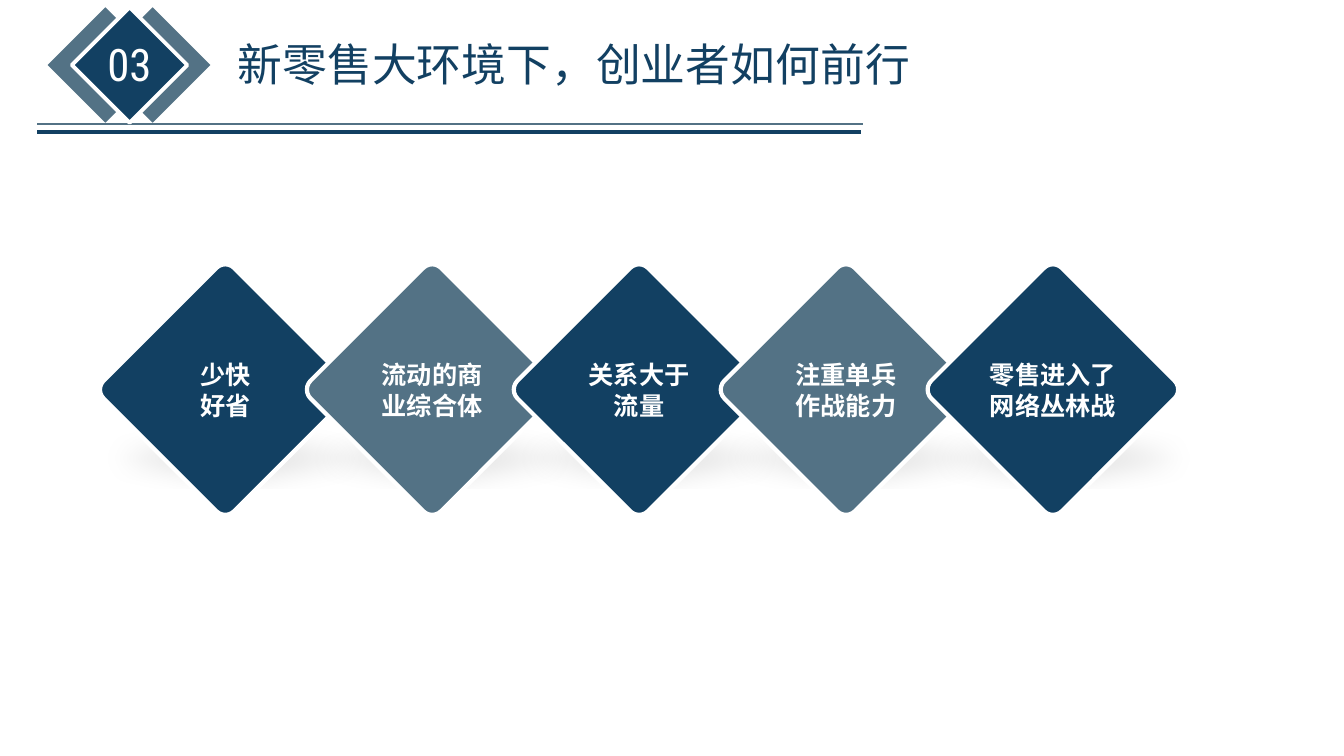
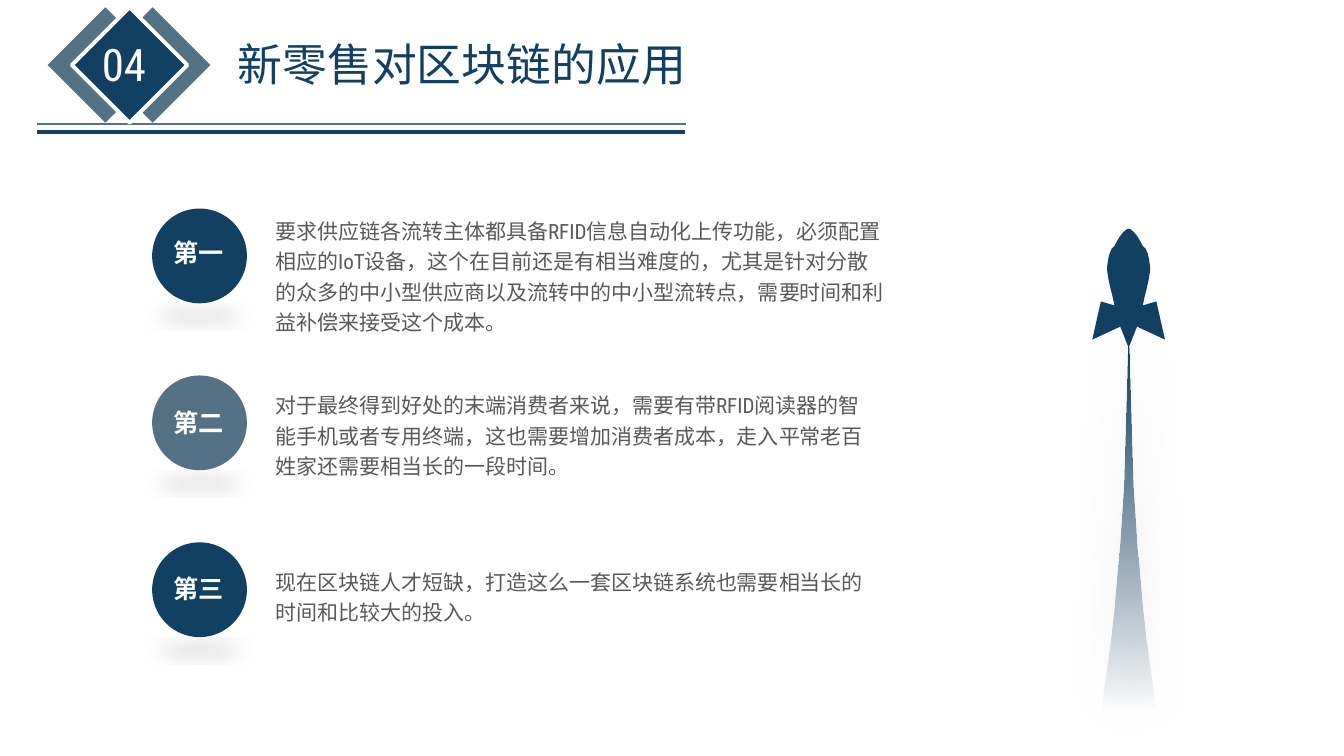
from lxml import etree
from pptx import Presentation
from pptx.dml.color import RGBColor
from pptx.enum.shapes import MSO_CONNECTOR, MSO_SHAPE
from pptx.enum.text import MSO_AUTO_SIZE, PP_ALIGN
from pptx.oxml.ns import qn
from pptx.util import Pt

NAVY = RGBColor(0x12, 0x40, 0x62)
SLATE = RGBColor(0x53, 0x72, 0x85)
GRAY = RGBColor(0x59, 0x59, 0x59)
WHITE = RGBColor(0xFF, 0xFF, 0xFF)

CJK_FONT = "Noto Sans CJK SC"
LATIN_FONT = "Roboto Condensed"

ROUNDED = MSO_SHAPE.ROUNDED_RECTANGLE
OVAL = MSO_SHAPE.OVAL
STRAIGHT = MSO_CONNECTOR.STRAIGHT
FIT_SHAPE = MSO_AUTO_SIZE.SHAPE_TO_FIT_TEXT
LEFT = PP_ALIGN.LEFT
CENTER = PP_ALIGN.CENTER

ROCKET_AXIS = 806.2
ROCKET_PROFILE = [
    (0, 163.4), (1.4, 163.8), (3.6, 165.6), (6.5, 169.2), (8.6, 172.8),
    (10.1, 175.7), (12.2, 177.8), (13.7, 181.4), (14.6, 185), (15.3, 190),
    (15.3, 193.7), (14.4, 199.4), (13, 205.9), (11.5, 211.7), (10.1, 218.2),
    (19.8, 215.3), (26, 242.6), (6, 233.3), (0, 248.4),
]
TRAIL_PROFILE = [
    (0.4, 248.4), (1, 275), (3.2, 347), (6.3, 393.6), (10, 434.9),
    (14.1, 470.9), (18.4, 499.7), (19.8, 509),
]

CHAIN = [
    (["少快", "好省"], 77.8),
    (["流动的商业综合体"], 93.6),
    (["关系大于流量"], 93.6),
    (["注重单兵作战能力"], 93.6),
    (["零售进入了网络丛林战"], 108),
]
POINTS = [
    ("第一", 166.3, 149, 452.2,
     "要求供应链各流转主体都具备RFID信息自动化上传功能，必须配置相应的IoT设备，"
     "这个在目前还是有相当难度的，尤其是针对分散的众多的中小型供应商以及流转中的"
     "中小型流转点，需要时间和利益补偿来接受这个成本。"),
    ("第二", 287.3, 273.6, 437.8,
     "对于最终得到好处的末端消费者来说，需要有带RFID阅读器的智能手机或者专用终端，"
     "这也需要增加消费者成本，走入平常老百姓家还需要相当长的一段时间。"),
    ("第三", 406.1, 399.6, 445.7,
     "现在区块链人才短缺，打造这么一套区块链系统也需要相当长的时间和比较大的投入。"),
]


def style_shape(shape, color, outline=0):
    shape.shadow.inherit = False
    shape.fill.solid()
    shape.fill.fore_color.rgb = color
    if outline:
        shape.line.color.rgb = WHITE
        shape.line.width = Pt(outline)
    else:
        shape.line.fill.background()


def add_shadow(shape, color, opacity, blur, distance, angle, **scaling):
    effects = shape._element.spPr.find(qn("a:effectLst"))
    shadow = etree.SubElement(
        effects, qn("a:outerShdw"), blurRad=str(Pt(blur)),
        dist=str(Pt(distance)), dir=str(angle * 60000), rotWithShape="0",
        **scaling)
    paint = etree.SubElement(shadow, qn("a:srgbClr"), val=color)
    etree.SubElement(paint, qn("a:alpha"), val=str(opacity * 1000))


def add_floor_shadow(shape, blur):
    add_shadow(shape, "000000", 10, blur, 3, 90,
               sx="90000", sy="-19000", algn="b")


def add_diamond(page, left, top, side, color, rounding=0, outline=0):
    diamond = page.shapes.add_shape(
        ROUNDED, Pt(left), Pt(top), Pt(side), Pt(side))
    diamond.adjustments[0] = rounding
    diamond.rotation = 45
    style_shape(diamond, color, outline)
    return diamond


def add_text(page, left, top, width, height, lines, size, color,
             font=CJK_FONT, align=LEFT, bold=False, spacing=None):
    box = page.shapes.add_textbox(Pt(left), Pt(top), Pt(width), Pt(height))
    frame = box.text_frame
    frame.word_wrap = True
    frame.auto_size = FIT_SHAPE
    frame.text = "\n".join(lines)
    for para in frame.paragraphs:
        para.alignment = align
        para.line_spacing = spacing
        para.font.size = Pt(size)
        para.font.bold = bold
        para.font.color.rgb = color
        para.font.name = font
        etree.SubElement(para.font._element, qn("a:ea"), typeface=CJK_FONT)


def add_rule(page, right, top, color, weight):
    rule = page.shapes.add_connector(
        STRAIGHT, Pt(26.6), Pt(top), Pt(right), Pt(top))
    rule.line.color.rgb = color
    rule.line.width = Pt(weight)
    etree.SubElement(rule._element.spPr, qn("a:effectLst"))


def add_header(page, number, number_left, title, title_width, rule_right):
    add_rule(page, rule_right, 88.6, SLATE, 1)
    for left in (79.9, 46.1):
        add_diamond(page, left, 17.3, 58.3, SLATE)
    add_diamond(page, 63.4, 17.3, 58.3, NAVY, outline=2.75)
    add_text(page, number_left, 23, 116.6 - number_left, 46, [number], 32,
             WHITE, font=LATIN_FONT, align=CENTER)
    add_rule(page, rule_right - 1, 94.3, NAVY, 3)
    add_text(page, 162.7, 23, title_width, 46, [title], 32, NAVY)


def add_symmetric(page, profile):
    outline = [(ROCKET_AXIS + half, y) for half, y in profile]
    outline += [(ROCKET_AXIS - half, y) for half, y in reversed(profile)]
    corners = [(Pt(x), Pt(y)) for x, y in outline]
    builder = page.shapes.build_freeform(*corners[0])
    builder.add_line_segments(corners[1:], close=True)
    shape = builder.convert_to_shape()
    style_shape(shape, NAVY)
    return shape


def add_rocket(page):
    add_symmetric(page, ROCKET_PROFILE)
    trail = add_symmetric(page, TRAIL_PROFILE)
    trail.fill.gradient()
    trail.fill.gradient_angle = 270
    for stop in trail.fill.gradient_stops:
        stop.color.rgb = NAVY
    colors = list(trail._element.spPr.iter(qn("a:srgbClr")))
    etree.SubElement(colors[-1], qn("a:alpha"), val="0")
    add_shadow(trail, "808080", 40, 33, 2, 45)


def add_chain(page):
    side, pitch, first_left = 131.8, 147.8, 95
    for index in range(len(CHAIN)):
        color = SLATE if index % 2 else NAVY
        diamond = add_diamond(page, first_left + pitch * index, 212.4, side,
                              color, rounding=0.068, outline=3)
        add_floor_shadow(diamond, 19)
    for index, (lines, width) in enumerate(CHAIN):
        middle = first_left + side / 2 + pitch * index
        add_text(page, middle - width / 2, 253.4, width, 51, lines, 18,
                 WHITE, align=CENTER, bold=True)


def add_points(page):
    for index, (label, label_top, top, width, text) in enumerate(POINTS):
        circle = page.shapes.add_shape(
            OVAL, Pt(108.7), Pt(149 + 119.2 * index), Pt(67.7), Pt(67.7))
        style_shape(circle, SLATE if index % 2 else NAVY)
        add_floor_shadow(circle, 14)
        add_text(page, 189.4, top, width, 50, [text], 15, GRAY,
                 font=LATIN_FONT, spacing=1.2)
        add_text(page, 116.6, label_top, 52.6, 29, [label], 18, WHITE,
                 bold=True)


def main():
    deck = Presentation()
    deck.slide_width = Pt(960)
    deck.slide_height = Pt(540)
    blank = deck.slide_layouts[6]

    page = deck.slides.add_slide(blank)
    add_header(page, "03", 68.4, "新零售大环境下，创业者如何前行", 496.8, 616.3)
    add_chain(page)

    page = deck.slides.add_slide(blank)
    add_header(page, "04", 60.5, "新零售对区块链的应用", 356.4, 490.3)
    add_points(page)
    add_rocket(page)

    deck.save("out.pptx")


if __name__ == "__main__":
    main()
